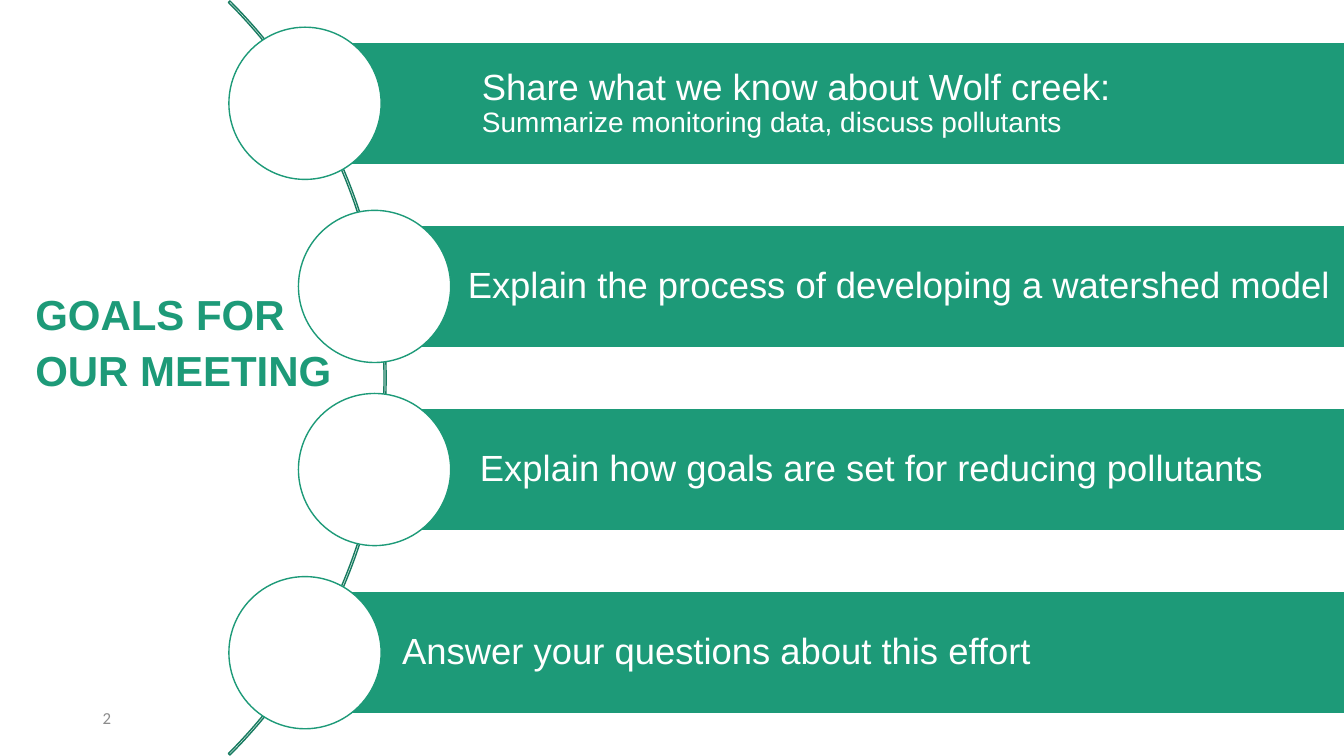
from dataclasses import dataclass

import pptx
import pptx.dml.color
import pptx.enum.shapes
import pptx.enum.text
import pptx.util

Inches = pptx.util.Inches
Pt = pptx.util.Pt
Shapes = pptx.enum.shapes.MSO_SHAPE


@dataclass(frozen=True)
class Theme:
    green: str = "1D9A78"
    dark_green: str = "177B60"
    white: str = "FFFFFF"
    gray: str = "8C8C8C"
    font: str = "Arial"
    number_font: str = "Calibri"
    title_size: int = 30
    goal_size: int = 26
    detail_size: int = 20
    number_size: int = 12


THEME = Theme()

# Bar left, bar width, text inset, circle left, goal, detail
GOALS = [
    (3.12, 10.34, 1.66, 2.27, "Share what we know about Wolf creek:",
     "Summarize monitoring data, discuss pollutants"),
    (3.53, 11.13, 1.11, 2.96, "Explain the process of developing a watershed model", ""),
    (3.72, 11.13, 1.04, 2.96, "Explain how goals are set for reducing pollutants", ""),
    (3.03, 11.83, 0.96, 2.27, "Answer your questions about this effort", ""),
]
FIRST_BAR_TOP, LAST_BAR_TOP = 0.42, 5.87
BAR_HEIGHT, CIRCLE_SIZE = 1.21, 1.51


def color(value):
    return pptx.dml.color.RGBColor.from_string(value)


def write(shape, *lines, font=THEME.font, fill=THEME.white, bold=False,
          spacing=1.0, inset=0.1, margin=0.06):
    """Write (text, size) lines as one left-aligned, vertically centred paragraph."""
    frame = shape.text_frame
    frame.word_wrap = True
    frame.auto_size = pptx.enum.text.MSO_AUTO_SIZE.NONE
    frame.vertical_anchor = pptx.enum.text.MSO_ANCHOR.MIDDLE
    frame.margin_left = Inches(inset)
    frame.margin_right = frame.margin_top = frame.margin_bottom = Inches(margin)
    paragraph = frame.paragraphs[0]
    paragraph.alignment = pptx.enum.text.PP_ALIGN.LEFT
    paragraph.line_spacing = spacing
    for index, (text, size) in enumerate(lines):
        if index:
            paragraph.add_line_break()
        run = paragraph.add_run()
        run.text = text
        run.font.name = font
        run.font.size = Pt(size)
        run.font.bold = bold
        run.font.color.rgb = color(fill)


def add_shape(slide, kind, box, line, fill=None):
    shape = slide.shapes.add_shape(kind, *map(Inches, box))
    shape.shadow.inherit = False
    if fill:
        shape.fill.solid()
        shape.fill.fore_color.rgb = color(fill)
    else:
        shape.fill.background()
    shape.line.color.rgb = color(line)
    shape.line.width = Pt(1)
    return shape


def add_title(slide, box):
    title = slide.shapes.title
    title.left, title.top, title.width, title.height = map(Inches, box)
    write(title, ("GOALS FOR OUR MEETING", THEME.title_size),
          fill=THEME.green, bold=True, spacing=1.1)


def add_slide_number(slide, box):
    number = slide.shapes.add_textbox(*map(Inches, box))
    write(number, ("2", THEME.number_size), font=THEME.number_font, fill=THEME.gray)


def add_arc(slide, box):
    arc = add_shape(slide, Shapes.BLOCK_ARC, box, THEME.dark_green)
    for index, value in enumerate((189, 27, 0.002)):
        arc.adjustments[index] = value


def add_goal(slide, box, inset, circle_left, goal, detail):
    """Place a bar in the box, with a circle centred on its height."""
    top, height = box[1], box[3]
    bar = add_shape(slide, Shapes.RECTANGLE, box, THEME.white, THEME.green)
    lines = [(goal, THEME.goal_size)]
    if detail:
        lines.append((detail, THEME.detail_size))
    write(bar, *lines, spacing=0.9, inset=inset)
    circle_top = top + (height - CIRCLE_SIZE) / 2
    add_shape(slide, Shapes.OVAL, (circle_left, circle_top, CIRCLE_SIZE, CIRCLE_SIZE),
              THEME.green, THEME.white)


def main():
    presentation = pptx.Presentation()
    presentation.slide_width = Inches(13.33)
    presentation.slide_height = Inches(7.5)
    slide = presentation.slides.add_slide(presentation.slide_layouts[5])
    add_title(slide, (0.25, 0.3, 3.3, 6.13))
    add_slide_number(slide, (0.92, 6.9, 11.5, 0.45))
    add_arc(slide, (-6.75, -1.54, 10.58, 10.58))
    pitch = (LAST_BAR_TOP - FIRST_BAR_TOP) / (len(GOALS) - 1)
    for index, (left, width, *content) in enumerate(GOALS):
        box = (left, FIRST_BAR_TOP + index * pitch, width, BAR_HEIGHT)
        add_goal(slide, box, *content)
    presentation.save("out.pptx")


if __name__ == "__main__":
    main()
